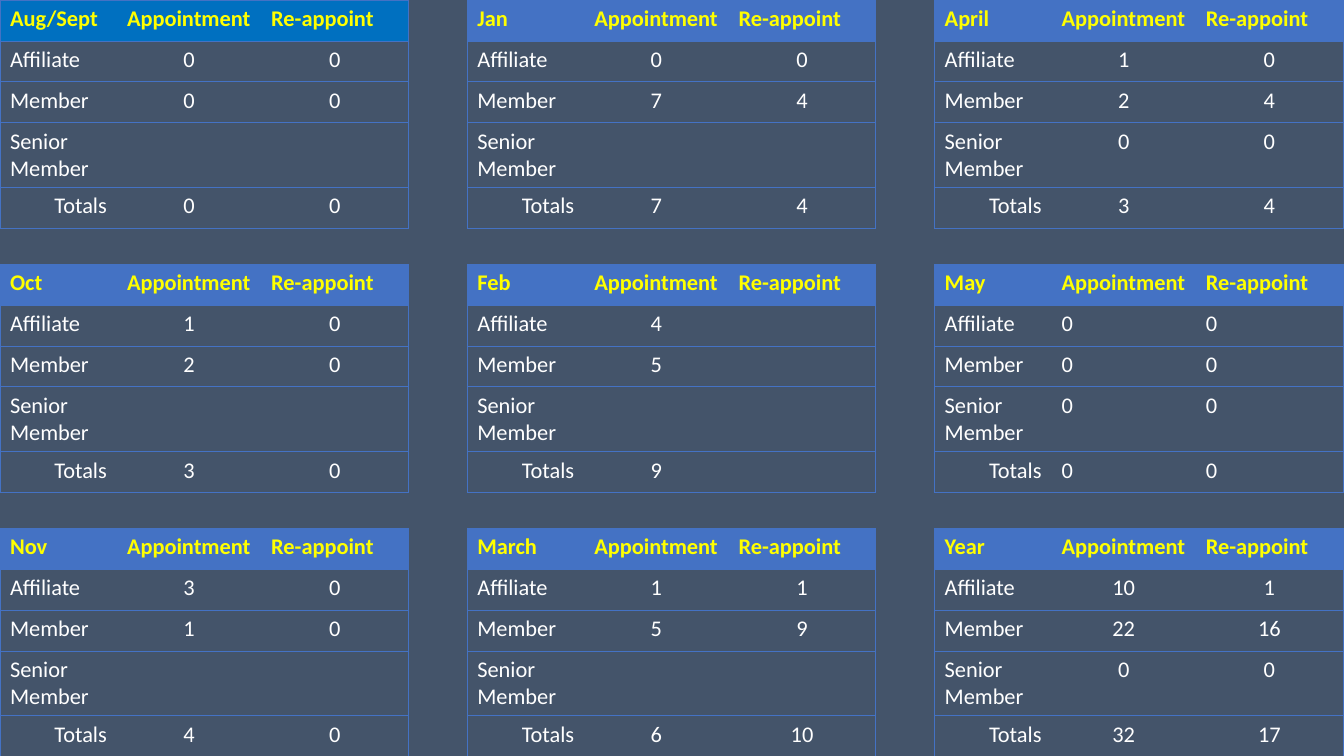
from dataclasses import dataclass

from lxml import etree
from pptx import Presentation
from pptx import util as u
from pptx.dml.color import RGBColor
from pptx.enum import text
from pptx.oxml.ns import qn


@dataclass(frozen=True)
class Theme:
    background: str = "44546A"
    header: str = "4472C4"
    first_header: str = "0070C0"
    header_text: str = "FFFF00"
    body_text: str = "FFFFFF"
    border: str = "4472C4"
    border_width: float = 0.5
    font: str = "Calibri"
    size: int = 16
    plain_table: str = "{2D5ABB26-0587-4C30-8999-92F81FD0307C}"


THEME = Theme()
SLIDE_WIDTH, SLIDE_HEIGHT = 13.33, 7.5
TABLE_WIDTH, TABLE_HEIGHT = 4.06, 2.26
COLUMN_WIDTHS = (1.16, 1.43, 1.46)
ROW_HEIGHT = u.Pt(29.2)
HEADINGS = ("Appointment", "Re-appoint")
LABELS = ("Affiliate", "Member", "Senior Member", "Totals")
LEFT, CENTER, RIGHT = (text.PP_ALIGN.LEFT, text.PP_ALIGN.CENTER,
                       text.PP_ALIGN.RIGHT)

# Each month: appointments and re-appointments for every label
NONE = ("", "")
CALENDAR = (
    (("Aug/Sept", ((0, 0), (0, 0), NONE, (0, 0))),
     ("Jan", ((0, 0), (7, 4), NONE, (7, 4))),
     ("April", ((1, 0), (2, 4), (0, 0), (3, 4)))),
    (("Oct", ((1, 0), (2, 0), NONE, (3, 0))),
     ("Feb", ((4, ""), (5, ""), NONE, (9, ""))),
     ("May", ((0, 0), (0, 0), (0, 0), (0, 0)))),
    (("Nov", ((3, 0), (1, 0), NONE, (4, 0))),
     ("March", ((1, 1), (5, 9), NONE, (6, 10))),
     ("Year", ((10, 1), (22, 16), (0, 0), (32, 17)))),
)


def draw_borders(cell, sides):
    """Line the given sides, named L, R, T and B in that order."""
    properties = cell._tc.get_or_add_tcPr()
    for side in sides:
        line = etree.SubElement(properties, qn(f"a:ln{side}"),
                                w=str(u.Pt(THEME.border_width)))
        fill = etree.SubElement(line, qn("a:solidFill"))
        etree.SubElement(fill, qn("a:srgbClr"), val=THEME.border)


def write_cell(cell, value, align, color, bold):
    para = cell.text_frame.paragraphs[0]
    para.alignment = align
    if value == "":
        return
    span = para.add_run()
    span.text = str(value)
    span.font.color.rgb = RGBColor.from_string(color)
    formats = {"name": THEME.font, "size": u.Pt(THEME.size), "bold": bold}
    for name, setting in formats.items():
        setattr(span.font, name, setting)


def add_month(page, box, month, counts, header_fill, count_align):
    """Place one month's table in the box (left, top, width, height)."""
    frame = page.shapes.add_table(len(LABELS) + 1, len(COLUMN_WIDTHS),
                                  *(u.Inches(length) for length in box))
    table = frame.table
    table.horz_banding = False
    table._tbl.tblPr.find(qn("a:tableStyleId")).text = THEME.plain_table
    for column, width in zip(table.columns, COLUMN_WIDTHS):
        column.width = u.Inches(width)
    for row in table.rows:
        row.height = ROW_HEIGHT
    frame.height = u.Inches(box[3])

    rows = [(month, *HEADINGS)]
    rows += [(label, *pair) for label, pair in zip(LABELS, counts)]
    last_column = len(COLUMN_WIDTHS) - 1
    for row_index, values in enumerate(rows):
        is_header = row_index == 0
        for column_index, value in enumerate(values):
            cell = table.cell(row_index, column_index)
            # Outer frame and a rule between rows
            sides = {0: "LTB", last_column: "RTB"}.get(column_index, "TB")
            draw_borders(cell, sides)
            # Header band above transparent rows
            if is_header:
                cell.fill.solid()
                cell.fill.fore_color.rgb = RGBColor.from_string(header_fill)
            else:
                cell.fill.background()
            # Wording
            if not is_header and column_index > 0:
                align = count_align
            else:
                align = RIGHT if value == "Totals" else LEFT
            color = THEME.header_text if is_header else THEME.body_text
            write_cell(cell, value, align, color, is_header)


def add_calendar(page, box):
    """Spread the months over the box with equal gaps."""
    left, top, width, height = box
    column_step = (width - TABLE_WIDTH) / (len(CALENDAR[0]) - 1)
    row_step = (height - TABLE_HEIGHT) / (len(CALENDAR) - 1)
    for row_index, months in enumerate(CALENDAR):
        for column_index, (month, counts) in enumerate(months):
            month_box = (left + column_index * column_step,
                         top + row_index * row_step,
                         TABLE_WIDTH, TABLE_HEIGHT)
            is_first = row_index == column_index == 0
            add_month(page, month_box, month, counts,
                      THEME.first_header if is_first else THEME.header,
                      LEFT if month == "May" else CENTER)


def main():
    deck = Presentation()
    deck.slide_width = u.Inches(SLIDE_WIDTH)
    deck.slide_height = u.Inches(SLIDE_HEIGHT)
    page = deck.slides.add_slide(deck.slide_layouts[6])
    page.background.fill.solid()
    page.background.fill.fore_color.rgb = RGBColor.from_string(THEME.background)
    add_calendar(page, (0, 0, SLIDE_WIDTH, SLIDE_HEIGHT))
    deck.save("out.pptx")


if __name__ == "__main__":
    main()
